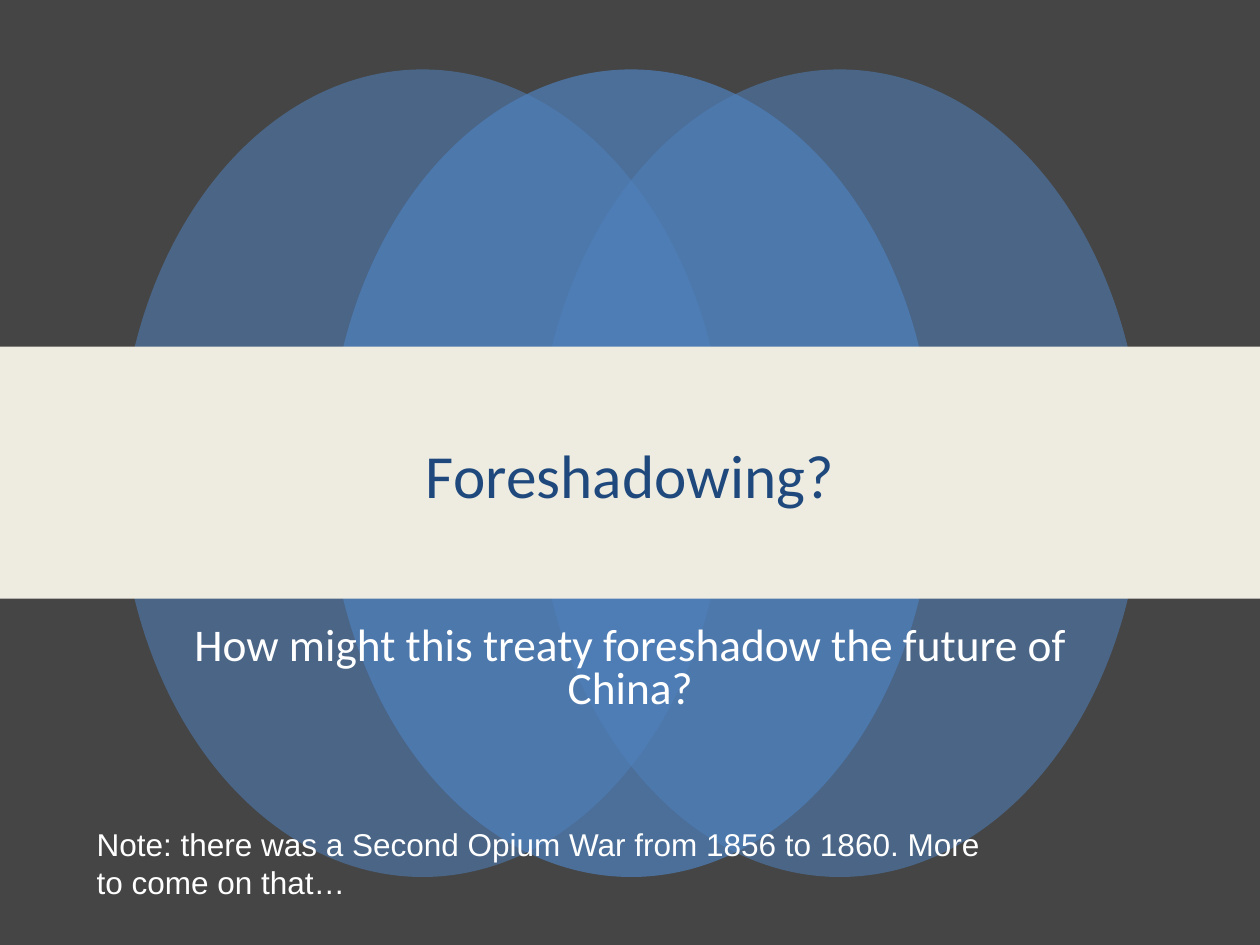
from dataclasses import dataclass
from lxml.etree import SubElement
from pptx import Presentation
from pptx.dml.color import RGBColor as RGB
from pptx.enum.shapes import MSO_SHAPE as Shape
from pptx.enum.text import MSO_ANCHOR as Anchor, MSO_AUTO_SIZE as AutoSize, PP_ALIGN as Align
from pptx.oxml.ns import qn
from pptx.util import Cm, Pt


@dataclass(frozen=True)
class Theme:
    dark: RGB = RGB(0x45, 0x45, 0x45)
    blue: RGB = RGB(0x4F, 0x81, 0xBD)
    cream: RGB = RGB(0xEE, 0xEC, 0xE1)
    navy: RGB = RGB(0x1F, 0x49, 0x7D)
    white: RGB = RGB(0xFF, 0xFF, 0xFF)
    font: str = "Calibri"
    note_font: str = "Arial"
    title_size: float = 35
    question_size: float = 25.9
    note_size: float = 18


THEME = Theme()
SLIDE_W, SLIDE_H = 25.4, 19.05


def place(sp, x, y, w, h):
    sp.left, sp.top, sp.width, sp.height = Cm(x), Cm(y), Cm(w), Cm(h)


def add_filled(s, kind, box, color, opacity=None):
    sp = s.shapes.add_shape(kind, *map(Cm, box))
    sp.shadow.inherit = False
    sp.fill.solid()
    sp.fill.fore_color.rgb = color
    sp.line.fill.background()
    if opacity is not None:
        clr = sp.fill._xPr.find(qn("a:solidFill"))[0]
        SubElement(clr, qn("a:alpha")).set("val", str(opacity * 1000))


def write(sp, text, font, size, color, align=Align.LEFT, spacing=None, before=0,
          anchor=Anchor.TOP):
    tf = sp.text_frame
    tf.word_wrap = True
    tf.auto_size = AutoSize.NONE
    tf.vertical_anchor = anchor
    p = tf.paragraphs[0]
    p.alignment = align
    p.line_spacing = spacing
    p.space_before = Pt(before)
    r = p.add_run()
    r.text = text
    r.font.name, r.font.size, r.font.color.rgb = font, Pt(size), color


def add_circles(s, x, y, w, h):
    circle_w = 12.22
    step = (w - circle_w) / 2
    for i, opacity in ((0, 55), (2, 55), (1, 70)):
        add_filled(s, Shape.OVAL, (x + i * step, y, circle_w, h), THEME.blue, opacity)


def add_title_band(s, x, y, w, h):
    add_filled(s, Shape.RECTANGLE, (x, y, w, h), THEME.cream)
    title = s.shapes.title
    s.shapes._spTree.append(title._element)
    margin_x, margin_y = 3.18, 0.73
    place(title, x + margin_x, y + margin_y, w - 2 * margin_x, 3.84)
    write(title, "Foreshadowing?", THEME.font, THEME.title_size, THEME.navy,
          Align.CENTER, 0.9, anchor=Anchor.MIDDLE)


def add_question(s, x, y, w, h):
    sp = s.shapes.add_textbox(Cm(x), Cm(y), Cm(w), Cm(h))
    write(sp, "How might this treaty foreshadow the future of China?", THEME.font,
          THEME.question_size, THEME.white, Align.CENTER, 0.8, 10)


def add_note(s, x, y, w, h):
    sp = s.shapes.add_textbox(Cm(x), Cm(y), Cm(w), Cm(h))
    write(sp, "Note: there was a Second Opium War from 1856 to 1860. More to come on that…",
          THEME.note_font, THEME.note_size, THEME.white)
    sp.text_frame.auto_size = AutoSize.SHAPE_TO_FIT_TEXT


def main():
    prs = Presentation()
    prs.slide_width, prs.slide_height = Cm(SLIDE_W), Cm(SLIDE_H)
    s = prs.slides.add_slide(prs.slide_layouts[5])
    s.background.fill.solid()
    s.background.fill.fore_color.rgb = THEME.dark
    add_circles(s, 2.41, 1.4, 20.63, 16.28)
    add_title_band(s, 0, 6.99, SLIDE_W, 5.08)
    add_question(s, 3.18, 12.5, 19.05, 2.11)
    add_note(s, 1.7, 16.51, 18.85, 1.8)
    prs.save("out.pptx")


if __name__ == "__main__":
    main()
